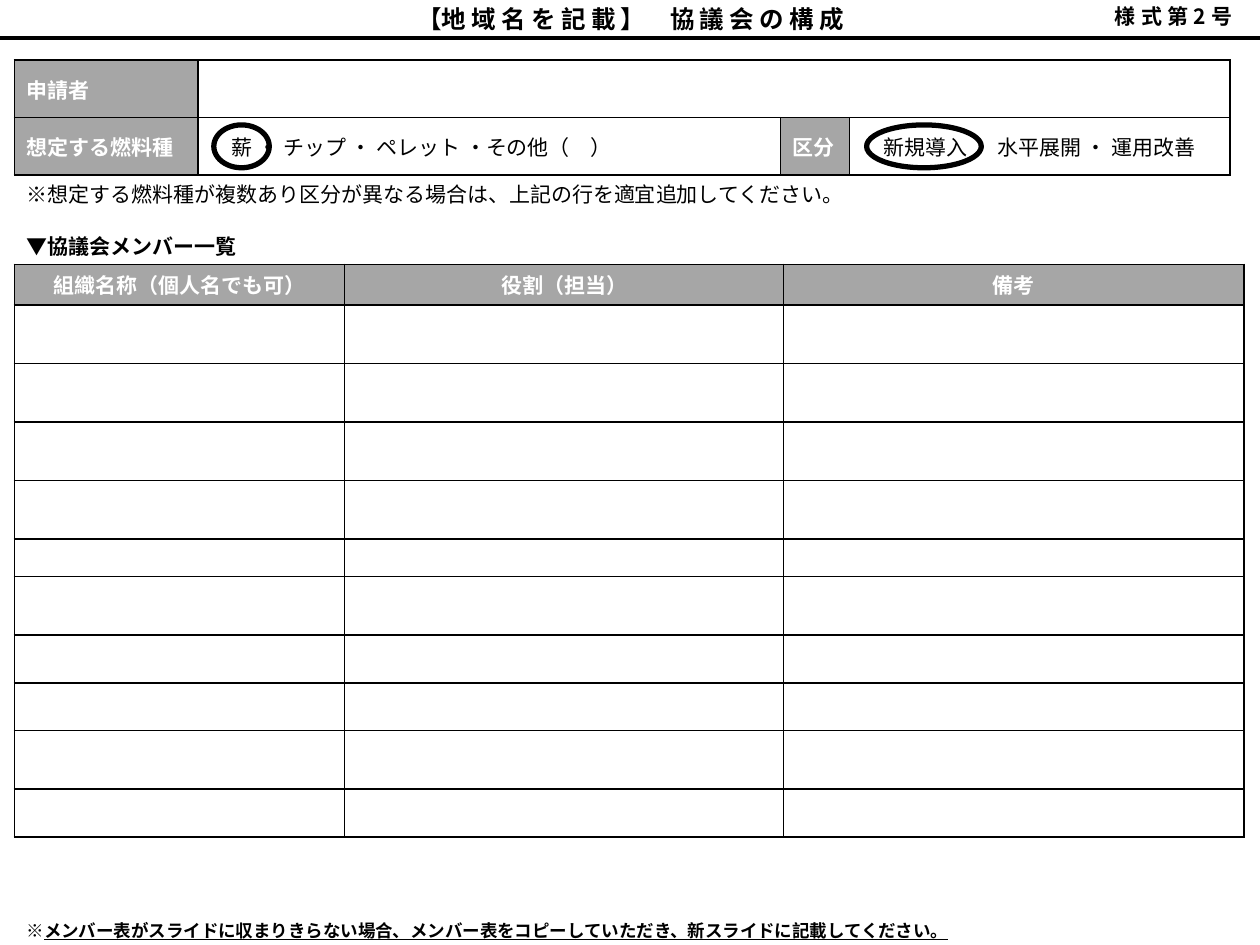
from typing import NamedTuple, Optional

from lxml import etree
from pptx import Presentation
from pptx.dml.color import RGBColor
from pptx.enum import shapes, text
from pptx.oxml import ns
from pptx.util import Pt

FONT = "Noto Sans CJK JP"
BLACK, WHITE, GRAY = "000000", "FFFFFF", "A6A6A6"
LEFT = 8.2
MIDDLE, BOTTOM = text.MSO_ANCHOR.MIDDLE, text.MSO_ANCHOR.BOTTOM


class Box(NamedTuple):
    left: float
    top: float
    width: float
    height: float

    def lengths(self) -> list:
        return [Pt(value) for value in self]


class Run(NamedTuple):
    words: str
    spacing: float = 0
    bold: Optional[bool] = None
    underline: bool = False


class Label(NamedTuple):
    row: int
    column: int
    words: str
    color: str = WHITE
    bold: bool = True
    fill: str = GRAY


def rgb(color: str) -> RGBColor:
    return RGBColor.from_string(color)


def write(frame, content, *, size=12.0, color=BLACK, bold=False,
          align=text.PP_ALIGN.LEFT) -> None:
    """Fill the first paragraph with a string or a list of runs."""
    paragraph = frame.paragraphs[0]
    paragraph.alignment = align
    for part in [Run(content)] if isinstance(content, str) else content:
        run = paragraph.add_run()
        run.text = part.words
        font = run.font
        font.name, font.size = FONT, Pt(size)
        font.bold = bold if part.bold is None else part.bold
        font.underline = part.underline
        font.color.rgb = rgb(color)
        properties = run._r.get_or_add_rPr()
        etree.SubElement(properties, ns.qn("a:ea"), typeface=FONT)
        if part.spacing:
            properties.set("spc", str(int(part.spacing * 100)))


def add_text(slide, box: Box, content, *, anchor=MIDDLE, **format_options) -> None:
    frame = slide.shapes.add_textbox(*box.lengths()).text_frame
    frame.word_wrap = True
    frame.vertical_anchor = anchor
    write(frame, content, **format_options)


def add_rule(slide, y: float) -> None:
    rule = slide.shapes.add_connector(
        shapes.MSO_CONNECTOR.STRAIGHT, Pt(0), Pt(y), Pt(720), Pt(y))
    rule.line.color.rgb = rgb(BLACK)
    rule.line.width = Pt(2.25)
    etree.SubElement(rule._element.spPr, ns.qn("a:effectLst"))


def add_ring(slide, box: Box) -> None:
    ring = slide.shapes.add_shape(shapes.MSO_SHAPE.OVAL, *box.lengths())
    ring.shadow.inherit = False
    ring.fill.background()
    ring.line.color.rgb = rgb(BLACK)
    ring.line.width = Pt(3)


def set_borders(cell, sides: str = "LRTB") -> None:
    properties = cell._tc.get_or_add_tcPr()
    for side in sides:
        line = etree.SubElement(properties, ns.qn(f"a:ln{side}"), w=str(Pt(1)))
        fill = etree.SubElement(line, ns.qn("a:solidFill"))
        etree.SubElement(fill, ns.qn("a:srgbClr"), val=BLACK)


def add_grid(slide, left: float, top: float, widths: list, heights: list,
             labels: list, *, title_rows: int = 0, align=text.PP_ALIGN.LEFT):
    """Add a bordered table; title rows keep only their bottom border."""
    box = Box(left, top, sum(widths), sum(heights))
    table = slide.shapes.add_table(len(heights), len(widths), *box.lengths()).table
    table.first_row = table.horz_banding = False
    for column, width in zip(table.columns, widths):
        column.width = Pt(width)
    by_place = {(label.row, label.column): label for label in labels}
    for row_index, height in enumerate(heights):
        table.rows[row_index].height = Pt(height)
        is_title = row_index < title_rows
        for column_index in range(len(widths)):
            cell = table.cell(row_index, column_index)
            cell.margin_top = cell.margin_bottom = Pt(2)
            cell.vertical_anchor = BOTTOM if is_title else MIDDLE
            set_borders(cell, "B" if is_title else "LRTB")
            label = by_place.get((row_index, column_index))
            if is_title:
                cell.fill.background()
            else:
                cell.fill.solid()
                cell.fill.fore_color.rgb = rgb(label.fill if label else WHITE)
            if label:
                write(cell.text_frame, label.words, color=label.color, bold=label.bold,
                      align=text.PP_ALIGN.LEFT if is_title else align)
            else:
                # Small text keeps empty rows from growing.
                paragraph = cell.text_frame.paragraphs[0]._p
                etree.SubElement(paragraph, ns.qn("a:endParaRPr"), sz="800")
    return table


def main() -> None:
    presentation = Presentation()
    presentation.slide_width, presentation.slide_height = Pt(720), Pt(540)
    slide = presentation.slides.add_slide(presentation.slide_layouts[6])

    add_rule(slide, 21.6)
    add_text(slide, Box(630, -1.4, 101.5, 21.6), [Run("様式第2号", 3)], bold=True)
    add_text(slide, Box(33.1, -0.7, 654.5, 23),
             [Run("【"), Run("地域名を記載", 3), Run("】\u3000".replace("\u3000", "　")),
              Run("協議会の構成", 3)],
             size=14, bold=True, align=text.PP_ALIGN.CENTER)

    applicant = add_grid(slide, LEFT, 34.4, [105.1, 332.6, 39.6, 217.4], [32.8] * 2, [
        Label(0, 0, "申請者"),
        Label(1, 0, "想定する燃料種"),
        Label(1, 1, "　薪 ・ チップ ・ ペレット ・その他（　）", BLACK, False, WHITE),
        Label(1, 2, "区分"),
        Label(1, 3, "　新規導入 ・ 水平展開 ・ 運用改善", BLACK, False, WHITE),
    ])
    applicant.cell(0, 1).merge(applicant.cell(0, 3))
    for left, width in ((122.2, 31.7), (495.2, 65.5)):
        add_ring(slide, Box(left, 71.4, width, 24.5))

    add_text(slide, Box(LEFT, 100, 487, 21.8),
             "※想定する燃料種が複数あり区分が異なる場合は、上記の行を適宜追加してください。",
             anchor=text.MSO_ANCHOR.TOP)

    tall, medium, short = 33.5, 27.3, 21.4
    headings = ["組織名称（個人名でも可）", "役割（担当）", "備考"]
    members = add_grid(
        slide, LEFT, 128, [188.8, 250.8, 263.1],
        [23.1, 23.1] + [tall] * 4 + [short, tall, medium, medium, tall, medium],
        [Label(0, 0, "▼協議会メンバー一覧", BLACK)]
        + [Label(1, column, words) for column, words in enumerate(headings)],
        title_rows=1, align=text.PP_ALIGN.CENTER)
    members.cell(0, 0).merge(members.cell(0, 2))

    add_text(slide, Box(LEFT, 523.2, 595.4, 16.8), [
        Run("※"),
        Run("メンバー表がスライドに収まりきらない場合、メンバー表をコピーしていただき、"
            "新スライドに記載してください。", bold=True, underline=True),
    ], size=10)

    presentation.save("out.pptx")


if __name__ == "__main__":
    main()
